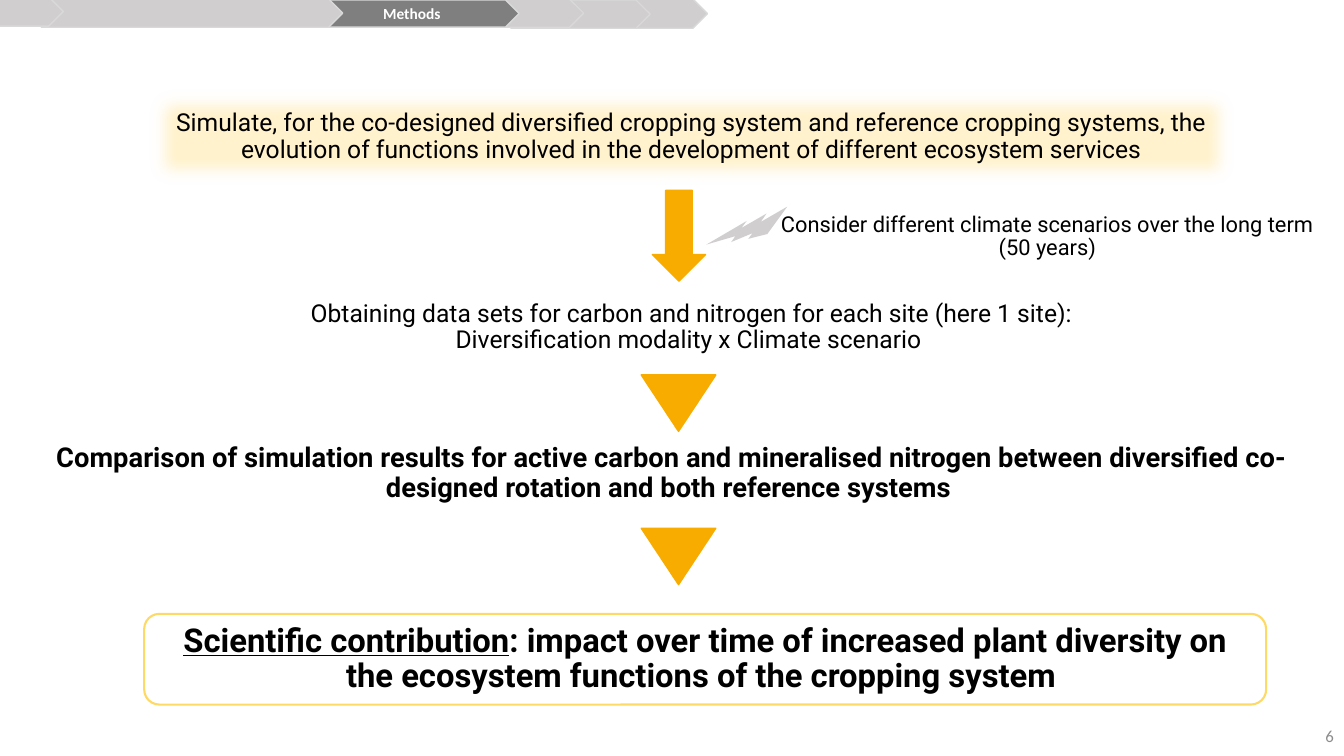
from dataclasses import dataclass

from lxml import etree
from pptx import Presentation
from pptx import util as u
from pptx.dml.color import RGBColor
from pptx.enum import shapes, text
from pptx.oxml import ns

KIND = shapes.MSO_SHAPE
ALIGN = text.PP_ALIGN
ORANGE, GREY, CREAM, YELLOW = "F8AC00", "D0CECE", "FFF2CC", "FFD966"
BLACK, WHITE, PAGE_GREY = "000000", "FFFFFF", "8C8C8C"


@dataclass
class Box:
    left: float
    top: float
    width: float
    height: float


@dataclass
class Figure:
    box: Box
    kind: shapes.MSO_SHAPE
    fill: str | None = None
    line: str | None = None
    weight: float = 1
    rotation: float = 0


@dataclass
class Label:
    words: str
    size: float
    font: str = "Roboto"
    color: str = BLACK
    bold: bool = False
    align: text.PP_ALIGN = ALIGN.CENTER
    spacing: float = 0.9
    underlined: str = ""


def rgb(color: str) -> RGBColor:
    return RGBColor.from_string(color)


def place(box: Box) -> list[u.Length]:
    return [u.Pt(v) for v in (box.left, box.top, box.width, box.height)]


def write(sp, label: Label) -> None:
    tf = sp.text_frame
    tf.word_wrap = True
    tf.vertical_anchor = text.MSO_ANCHOR.MIDDLE
    p = tf.paragraphs[0]
    if label.underlined:
        r = p.add_run()
        r.text = label.underlined
        r.font.underline = True
    for i, row in enumerate(label.words.split("\n")):
        if i:
            p.add_line_break()
        p.add_run().text = row
    p.alignment = label.align
    p.line_spacing = label.spacing
    p.font.name = label.font
    p.font.size = u.Pt(label.size)
    p.font.bold = label.bold
    p.font.color.rgb = rgb(label.color)


def draw(s, figure: Figure, label: Label | None = None):
    sp = s.shapes.add_shape(figure.kind, *place(figure.box))
    sp.shadow.inherit = False
    sp.rotation = figure.rotation
    if figure.fill:
        sp.fill.solid()
        sp.fill.fore_color.rgb = rgb(figure.fill)
    else:
        sp.fill.background()
    if figure.line:
        sp.line.color.rgb = rgb(figure.line)
        sp.line.width = u.Pt(figure.weight)
    else:
        sp.line.fill.background()
    if label:
        write(sp, label)
    return sp


def add_text(s, box: Box, label: Label) -> None:
    write(s.shapes.add_textbox(*place(box)), label)


def soften(sp, radius: float) -> None:
    """Fade the edges of a shape over the given radius."""
    effects = sp._element.spPr.find(ns.qn("a:effectLst"))
    etree.SubElement(effects, ns.qn("a:softEdge"), rad=str(u.Pt(radius)))


def draw_steps(s) -> None:
    simulate = draw(s, Figure(Box(103, 60.5, 782, 75), KIND.RECTANGLE, CREAM), Label(
        "Simulate, for the co-designed diversified cropping system and reference "
        "cropping systems, the evolution of functions involved in the development "
        "of different ecosystem services", 17.6))
    soften(simulate, 12.5)
    add_text(s, Box(548, 136.8, 400.3, 64.8), Label(
        "Consider different climate scenarios over the long term (50 years)", 15.6))
    draw(s, Figure(Box(103, 438.5, 801.4, 64.8), KIND.ROUNDED_RECTANGLE,
                   line=YELLOW, weight=1.5),
         Label(": impact over time of increased plant diversity on the ecosystem "
               "functions of the cropping system ", 23.4, bold=True,
               underlined="Scientific contribution"))
    add_text(s, Box(28, 306, 904.3, 64.8), Label(
        "Comparison of simulation results for active carbon and mineralised nitrogen "
        "between diversified co-designed rotation and both reference systems ",
        19.5, bold=True))
    add_text(s, Box(174.2, 201.6, 640, 64.8), Label(
        "Obtaining data sets for carbon and nitrogen for each site (here 1 site):\n"
        "Diversification modality x Climate scenario ", 17.6))


def draw_arrows(s) -> None:
    draw(s, Figure(Box(466, 136, 38, 64.8), KIND.DOWN_ARROW, ORANGE, ORANGE))
    draw(s, Figure(Box(504.7, 150.5, 60.5, 24.5), KIND.LIGHTNING_BOLT, GREY,
                   rotation=136.5))
    for top in (267.8, 377.3):
        draw(s, Figure(Box(458, top, 53.3, 40.3), KIND.ISOSCELES_TRIANGLE,
                       ORANGE, ORANGE, rotation=180))


def draw_progress_bar(s) -> None:
    methods = Label("Methods", 11, "Calibri", WHITE, bold=True, spacing=1)
    tabs = [
        (Box(419, -0.7, 86.4, 20.9), None),
        (Box(365, 0, 99.4, 20.2), None),
        (Box(347.8, -0.7, 69.1, 20.2), None),
        (Box(222.5, 0, 148.3, 19.4), methods),
        (Box(29.5, -0.7, 215.3, 20.2), None),
        (Box(-0.7, -2.2, 46, 20.9), None),
    ]
    for box, label in tabs:
        fill = "7F7F7F" if label else GREY
        draw(s, Figure(box, KIND.PENTAGON, fill, "D9D9D9"), label)


def main() -> None:
    prs = Presentation()
    prs.slide_width, prs.slide_height = u.Pt(960), u.Pt(540)
    s = prs.slides.add_slide(prs.slide_layouts[6])
    draw_steps(s)
    draw_arrows(s)
    draw_progress_bar(s)
    add_text(s, Box(743.8, 511.2, 216, 28.8),
             Label("6", 12, "Calibri", PAGE_GREY, align=ALIGN.RIGHT, spacing=1))
    prs.save("out.pptx")


if __name__ == "__main__":
    main()
